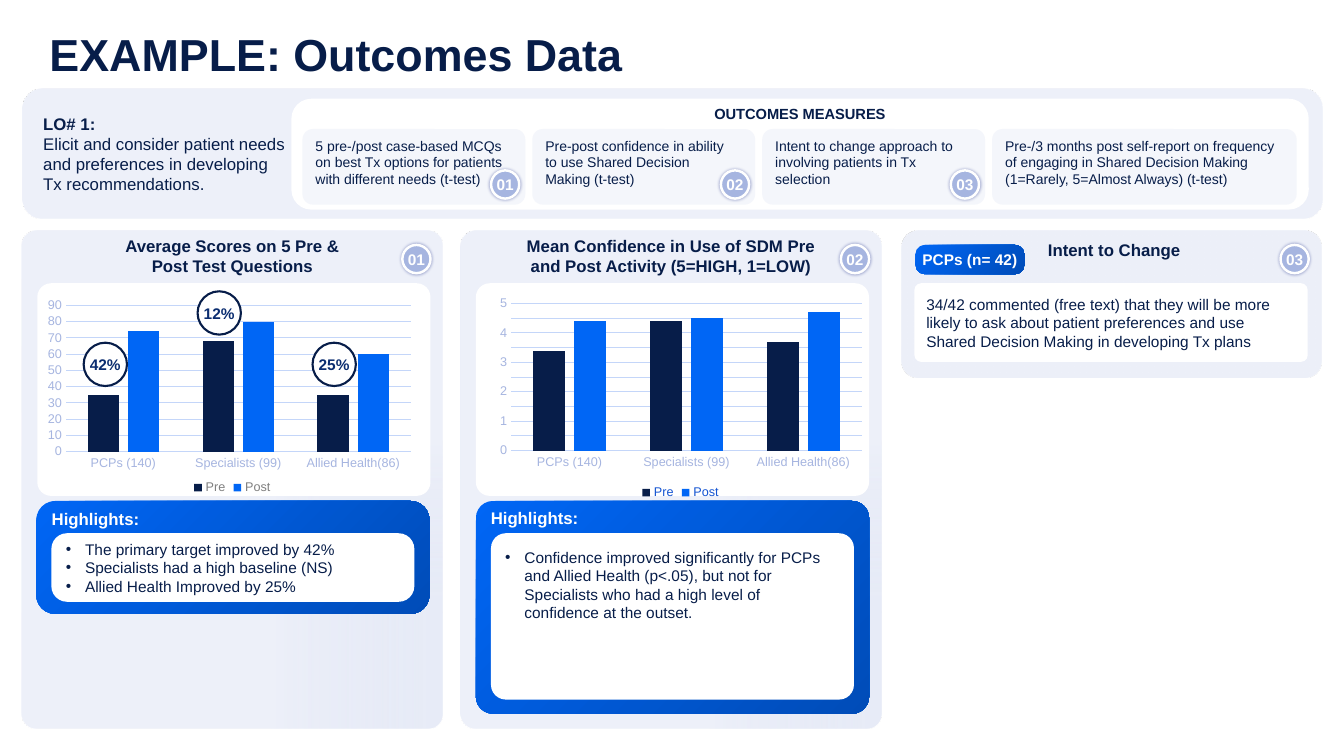
from lxml.etree import SubElement
from pptx import Presentation
from pptx.chart.data import CategoryChartData
from pptx.dml.color import RGBColor
from pptx.enum.chart import XL_CHART_TYPE, XL_LEGEND_POSITION, XL_TICK_MARK
from pptx.enum.shapes import MSO_SHAPE
from pptx.enum.text import MSO_ANCHOR, PP_ALIGN
from pptx.oxml.ns import qn
from pptx.util import Inches, Pt

COLORS = {
    "navy": "071D49", "blue": "0066F5", "deep": "004CB8", "percent": "0B2D70",
    "white": "FFFFFF", "mist": "EDF0F9", "haze": "DBE1F3", "lilac": "A6B5E0",
    "grid": "C4D6F9", "gray": "808080", "legend_blue": "1454D2", "shadow": "00147B",
}
FONT = "Arial"
CARD_W, CARD_INSET = 3.9, 0.15
PANEL_W, PANEL_TOP, PANEL_H = 4.17, 2.29, 4.94
BADGE = 0.28


def rgb(name):
    return RGBColor.from_string(COLORS[name])


def set_font(font, size, color, bold=False):
    font.name, font.size, font.bold = FONT, Pt(size), bold
    font.color.rgb = rgb(color)


def set_alpha(shape, color, percent):
    for clr in shape.element.spPr.iter(qn("a:srgbClr")):
        if clr.get("val") == COLORS[color]:
            SubElement(clr, qn("a:alpha"), val=str(percent * 1000))


def write_text(shape, text, size=11, color="navy", bold=False, bold_first=False,
               align=PP_ALIGN.LEFT, anchor=MSO_ANCHOR.TOP, margins=(0, 0, 0, 0),
               bullet=False, line_spacing=None):
    """Write each line of text as a paragraph; margins are left, top, right, bottom."""
    frame = shape.text_frame
    frame.word_wrap, frame.vertical_anchor = True, anchor
    (frame.margin_left, frame.margin_top,
     frame.margin_right, frame.margin_bottom) = map(Inches, margins)
    frame.text = text
    for index, paragraph in enumerate(frame.paragraphs):
        paragraph.alignment = align
        if line_spacing:
            paragraph.line_spacing = line_spacing
        if bullet:
            props = paragraph._p.get_or_add_pPr()
            props.set("marL", str(Inches(0.19)))
            props.set("indent", str(-Inches(0.19)))
            SubElement(props, qn("a:buFont"), typeface=FONT)
            SubElement(props, qn("a:buChar"), char="•")
        for run in paragraph.runs:
            set_font(run.font, size, color, bold or (bold_first and index == 0))


def add_box(slide, left, top, width, height, fill="white", corner=None,
            kind=MSO_SHAPE.ROUNDED_RECTANGLE):
    box = slide.shapes.add_shape(kind, *map(Inches, (left, top, width, height)))
    box.shadow.inherit = False
    box.line.fill.background()
    if corner is not None:
        box.adjustments[0] = corner
    if fill:
        box.fill.solid()
        box.fill.fore_color.rgb = rgb(fill)
    return box


def fill_gradient(box, start, end, start_at=0):
    box.fill.gradient()
    box.fill.gradient_angle = 315
    for stop, color, position in zip(box.fill.gradient_stops, (start, end), (start_at, 1)):
        stop.color.rgb = rgb(color)
        stop.position = position


def add_panel(slide, left, top, width, height, corner):
    """Pale panel whose gradient spreads from its lower right corner."""
    panel = add_box(slide, left, top, width, height, None, corner)
    fill_gradient(panel, "haze", "mist", 0.24)
    set_alpha(panel, "haze", 65)
    linear = next(panel.element.spPr.iter(qn("a:lin")))
    gradient = linear.getparent()
    gradient.remove(linear)
    spread = SubElement(gradient, qn("a:path"), {"path": "rect"})
    SubElement(spread, qn("a:fillToRect"), l="100000", t="100000")
    return panel


def add_blue_box(slide, left, top, width, height, corner):
    box = add_box(slide, left, top, width, height, None, corner)
    fill_gradient(box, "blue", "deep")
    return box


def add_circle(slide, left, top, size, text, fill, border, border_width, color):
    circle = add_box(slide, left, top, size, size, fill, kind=MSO_SHAPE.OVAL)
    circle.line.color.rgb = rgb(border)
    circle.line.width = Pt(border_width)
    write_text(circle, text, color=color, bold=True,
               align=PP_ALIGN.CENTER, anchor=MSO_ANCHOR.MIDDLE)
    circle.text_frame.word_wrap = False
    return circle


def add_badge(slide, left, top, text):
    badge = add_circle(slide, left, top, BADGE, text, "lilac", "white", 1.75, "white")
    effects = badge.element.spPr.find(qn("a:effectLst"))
    glow = SubElement(effects, qn("a:outerShdw"), blurRad=str(Pt(2)), dist="0",
                      dir="0", algn="ctr", rotWithShape="0")
    SubElement(glow, qn("a:srgbClr"), val=COLORS["shadow"])
    set_alpha(badge, "shadow", 34)


def add_percent(slide, left, top, text):
    add_circle(slide, left, top, 0.43, text, "white", "navy", 1.5, "percent")


def add_score_chart(slide, place, pre, post, top_value, step, plot, legend_color):
    data = CategoryChartData()
    data.categories = ["PCPs (140)", "Specialists (99)", "Allied Health(86)"]
    data.add_series("Pre", pre)
    data.add_series("Post", post)
    chart = slide.shapes.add_chart(XL_CHART_TYPE.COLUMN_CLUSTERED,
                                   *map(Inches, place), data).chart
    set_font(chart.font, 10, "navy")
    chart.has_title = False
    chart.has_legend = True
    chart.legend.position = XL_LEGEND_POSITION.BOTTOM
    chart.legend.include_in_layout = False
    set_font(chart.legend.font, 9, legend_color)

    bars = chart.plots[0]
    bars.gap_width, bars.overlap, bars.vary_by_categories = 140, -30, False
    for series, color in zip(bars.series, ("navy", "blue")):
        series.format.fill.solid()
        series.format.fill.fore_color.rgb = rgb(color)

    scores = chart.value_axis
    for axis in (chart.category_axis, scores):
        axis.major_tick_mark = axis.minor_tick_mark = XL_TICK_MARK.NONE
        set_font(axis.tick_labels.font, 9, "lilac")
    scores.minimum_scale, scores.maximum_scale, scores.major_unit = 0, top_value, step
    scores.format.line.fill.background()
    for line in (chart.category_axis.format.line, scores.major_gridlines.format.line):
        line.color.rgb = rgb("grid")
        line.width = Pt(0.75)

    plot_area = chart.element.chart.plotArea
    for old in plot_area.findall(qn("c:layout")):
        plot_area.remove(old)
    layout = SubElement(plot_area, qn("c:layout"))
    plot_area.insert(0, layout)
    manual = SubElement(layout, qn("c:manualLayout"))
    settings = [("layoutTarget", "inner"), ("xMode", "edge"), ("yMode", "edge")]
    for tag, value in settings + list(zip("xywh", plot)):
        SubElement(manual, qn(f"c:{tag}"), val=str(value))


def add_chart_panel(slide, left, corner, title, number, chart):
    panel = add_panel(slide, left, PANEL_TOP, PANEL_W, PANEL_H, corner)
    write_text(panel, title, size=12, bold=True, align=PP_ALIGN.CENTER,
               margins=(0.1, 0, 0.1, 0))
    add_box(slide, left + CARD_INSET, 2.81, CARD_W, 2.11, corner=0.065)
    add_score_chart(slide, **chart)
    add_badge(slide, left + 3.77, 2.43, number)


def add_highlights(slide, left, height, corner, note_height, note_corner, text, **note_format):
    frame = add_blue_box(slide, left, 4.97, CARD_W, height, corner)
    write_text(frame, "Highlights:", size=12, color="white", bold=True,
               margins=(0.1, 0.02, 0.1, 0.1))
    note = add_box(slide, left + CARD_INSET, 5.29, 3.6, note_height, corner=note_corner)
    write_text(note, text, bullet=True, **note_format)


def add_objective(slide):
    banner = add_panel(slide, 0.22, 0.88, 12.9, 1.29, 0.156)
    write_text(banner, "LO# 1:\nElicit and consider patient needs and preferences in "
               "developing Tx recommendations.", size=12, bold_first=True,
               anchor=MSO_ANCHOR.MIDDLE, margins=(0.15, 0.1, 10.2, 0.1))
    measures = add_box(slide, 2.89, 0.98, 10.09, 1.1, corner=0.179)
    write_text(measures, "OUTCOMES MEASURES", size=10.5, bold=True, align=PP_ALIGN.CENTER)
    texts = ["5 pre-/post case-based MCQs on best Tx options for patients with different "
             "needs (t-test)",
             "Pre-post confidence in ability to use Shared Decision Making (t-test)",
             "Intent to change approach to involving patients in Tx selection",
             "Pre-/3 months post self-report on frequency of engaging in Shared Decision "
             "Making (1=Rarely, 5=Almost Always) (t-test)"]
    for index, text in enumerate(texts):
        left, last = 3 + 2.28 * index, index == 3
        measure = add_box(slide, left, 1.28, 3.02 if last else 2.21, 0.75, "mist", 0.139)
        set_alpha(measure, "mist", 60)
        write_text(measure, text, size=10, margins=(0.1, 0.05, 0.1 if last else 0.2, 0))
        if not last:
            add_badge(slide, left + 1.87, 1.69, f"{index + 1:02}")


def add_intent_panel(slide):
    panel = add_panel(slide, 8.94, PANEL_TOP, PANEL_W, 1.46, 0.118)
    write_text(panel, "Intent to Change", size=12, bold=True, align=PP_ALIGN.CENTER,
               margins=(0.15, 0.04, 0.1, 0))
    group = add_blue_box(slide, 9.08, 2.43, 1.08, 0.29, 0.319)
    write_text(group, "PCPs (n= 42)", color="white", bold=True, align=PP_ALIGN.CENTER,
               anchor=MSO_ANCHOR.MIDDLE)
    add_badge(slide, 12.7, 2.43, "03")
    comment = add_box(slide, 9.07, 2.81, CARD_W, 0.78, corner=0.084)
    write_text(comment, "34/42 commented (free text) that they will be more likely to ask "
               "about patient preferences and use Shared Decision Making in developing Tx "
               "plans", anchor=MSO_ANCHOR.MIDDLE, margins=(0.1, 0, 0.1, 0))


def main():
    deck = Presentation()
    deck.slide_width, deck.slide_height = Inches(13.33), Inches(7.5)
    slide = deck.slides.add_slide(deck.slide_layouts[6])
    title = slide.shapes.add_textbox(*map(Inches, (0.49, 0.35, 12.49, 0.42)))
    write_text(title, "EXAMPLE: Outcomes Data", size=32, bold=True, line_spacing=0.85)
    add_chart_panel(slide, 4.57, 0.038, "Mean Confidence in Use of SDM Pre\n"
                    "and Post Activity (5=HIGH, 1=LOW)", "02",
                    dict(place=(4.8, 2.85, 3.9, 2.15), pre=(3.4, 4.4, 3.7),
                         post=(4.4, 4.5, 4.7), top_value=5, step=0.5,
                         plot=(0.069, 0.075, 0.892, 0.679), legend_color="legend_blue"))
    add_chart_panel(slide, 0.22, 0.037, "Average Scores on 5 Pre &\nPost Test Questions", "01",
                    dict(place=(0.41, 2.75, 3.79, 2.2), pre=(35, 68, 35),
                         post=(74, 80, 60), top_value=90, step=10,
                         plot=(0.064, 0.127, 0.903, 0.66), legend_color="gray"))
    for left, top, gain in [(3.1, 3.4, "25%"), (1.96, 2.89, "12%"), (0.83, 3.4, "42%")]:
        add_percent(slide, left, top, gain)
    add_objective(slide)
    add_intent_panel(slide)
    add_highlights(slide, 4.72, 2.11, 0.08, 1.65, 0.089,
                   "Confidence improved significantly for PCPs and Allied Health (p<.05), but "
                   "not for Specialists who had a high level of confidence at the outset.",
                   margins=(0.1, 0.1, 0.1, 0))
    add_highlights(slide, 0.36, 1.12, 0.168, 0.68, 0.228,
                   "The primary target improved by 42%\nSpecialists had a high baseline (NS)\n"
                   "Allied Health Improved by 25%",
                   anchor=MSO_ANCHOR.MIDDLE, margins=(0.1, 0, 0.1, 0))
    deck.save("out.pptx")


if __name__ == "__main__":
    main()
